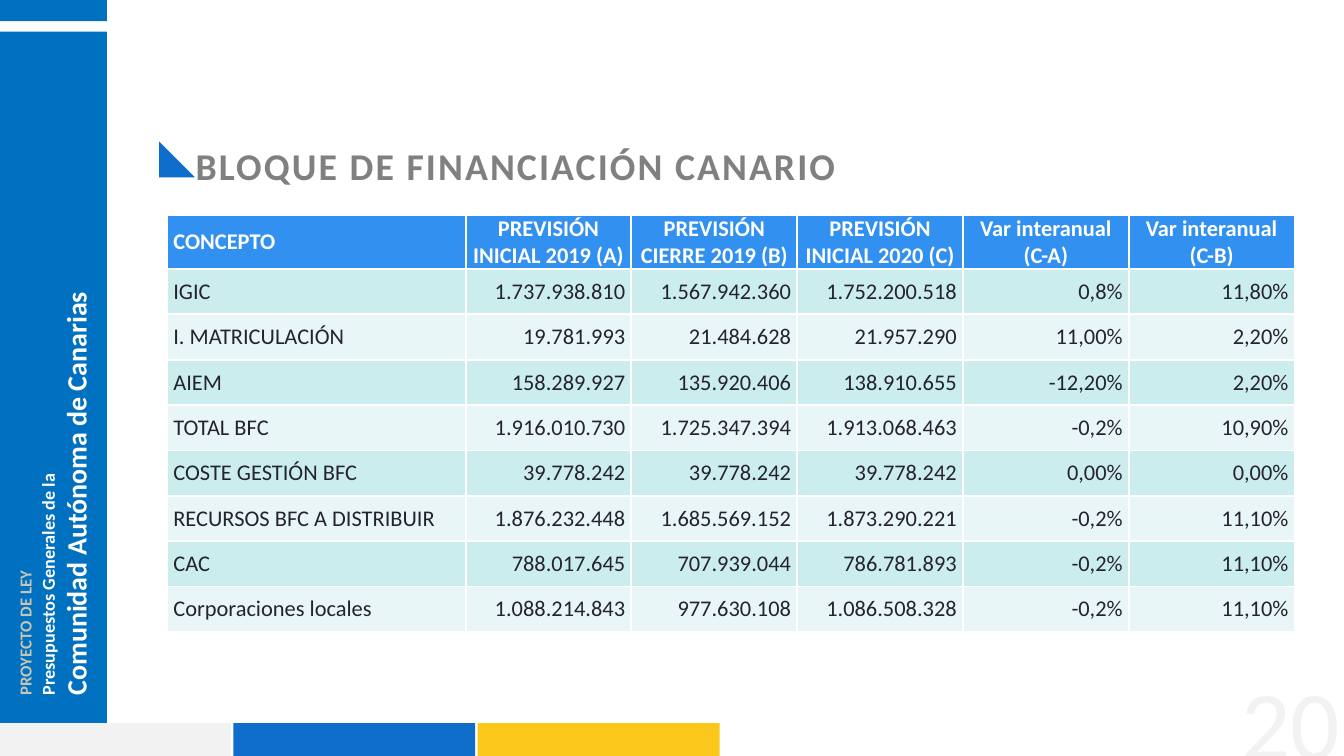
from lxml.etree import SubElement
from pptx import Presentation
from pptx.dml.color import RGBColor
from pptx.enum.shapes import MSO_SHAPE
from pptx.enum.text import MSO_ANCHOR, MSO_AUTO_SIZE, PP_ALIGN
from pptx.oxml.ns import qn
from pptx.util import Inches, Pt

HEADER = ["CONCEPTO", "PREVISIÓN INICIAL 2019 (A)", "PREVISIÓN CIERRE 2019 (B)",
          "PREVISIÓN INICIAL 2020 (C)", "Var interanual (C-A)", "Var interanual (C-B)"]
ROWS = [
    ["IGIC", "1.737.938.810", "1.567.942.360", "1.752.200.518", "0,8%", "11,80%"],
    ["I. MATRICULACIÓN", "19.781.993", "21.484.628", "21.957.290", "11,00%", "2,20%"],
    ["AIEM", "158.289.927", "135.920.406", "138.910.655", "-12,20%", "2,20%"],
    ["TOTAL BFC", "1.916.010.730", "1.725.347.394", "1.913.068.463", "-0,2%", "10,90%"],
    ["COSTE GESTIÓN BFC", "39.778.242", "39.778.242", "39.778.242", "0,00%", "0,00%"],
    ["RECURSOS BFC A DISTRIBUIR", "1.876.232.448", "1.685.569.152", "1.873.290.221",
     "-0,2%", "11,10%"],
    ["CAC", "788.017.645", "707.939.044", "786.781.893", "-0,2%", "11,10%"],
    ["Corporaciones locales", "1.088.214.843", "977.630.108", "1.086.508.328",
     "-0,2%", "11,10%"],
]


def rgb(value):
    """Return the colour for a hex string."""
    return RGBColor.from_string(value)


def style(p, size, color, bold=False, align=PP_ALIGN.LEFT):
    """Format a paragraph and its runs."""
    p.alignment = align
    for r in p.runs:
        r.font.name = "Calibri"
        r.font.size = Pt(size)
        r.font.bold = bold
        r.font.color.rgb = rgb(color)


def add_block(s, kind, left, top, width, height, color):
    """Add a flat shape without outline."""
    sp = s.shapes.add_shape(kind, Inches(left), Inches(top), Inches(width), Inches(height))
    sp.shadow.inherit = False
    sp.fill.solid()
    sp.fill.fore_color.rgb = rgb(color)
    sp.line.fill.background()


def add_side_text(s, left, top, width, height, lines):
    """Add upward-reading text lines given as (text, size, colour)."""
    sp = s.shapes.add_textbox(Inches(left), Inches(top), Inches(width), Inches(height))
    sp.rotation = 270
    tf = sp.text_frame
    tf.word_wrap = True
    tf.margin_left = tf.margin_right = tf.margin_top = tf.margin_bottom = 0
    tf.text = "\n".join(text for text, _, _ in lines)
    for p, (_, size, color) in zip(tf.paragraphs, lines):
        style(p, size, color, True)


def add_page_number(s, number):
    """Add the large page number in the bottom corner."""
    sp = s.shapes.add_textbox(Inches(20.47), Inches(13.09), Inches(6.22), Inches(1.92))
    tf = sp.text_frame
    tf.word_wrap = True
    tf.text = number
    style(tf.paragraphs[0], 139, "F2F2F2", align=PP_ALIGN.RIGHT)


def set_title(s, text):
    """Place and format the slide title."""
    sp = s.shapes.title
    sp.left, sp.top, sp.width, sp.height = (Inches(v) for v in (3.78, 2.78, 21.44, 1.39))
    tf = sp.text_frame
    tf.text = text
    tf.auto_size = MSO_AUTO_SIZE.NONE
    tf.vertical_anchor = MSO_ANCHOR.TOP
    p = tf.paragraphs[0]
    style(p, 54, "808080", True)
    p.runs[0].font._element.set("spc", "300")


def set_borders(cell, color, width):
    """Draw the four borders of a cell."""
    tcPr = cell._tc.get_or_add_tcPr()
    for side in ("a:lnL", "a:lnR", "a:lnT", "a:lnB"):
        ln = SubElement(tcPr, qn(side), w=str(Pt(width)))
        fill = SubElement(ln, qn("a:solidFill"))
        SubElement(fill, qn("a:srgbClr"), val=color)


def fill_cell(cell, text, fill, color, bold, align):
    """Write and format one table cell."""
    set_borders(cell, "FFFFFF", 3)
    cell.fill.solid()
    cell.fill.fore_color.rgb = rgb(fill)
    cell.vertical_anchor = MSO_ANCHOR.MIDDLE
    cell.margin_left = cell.margin_right = Inches(0.12)
    cell.margin_top = cell.margin_bottom = 0
    cell.text = text
    style(cell.text_frame.paragraphs[0], 32, color, bold, align)


def add_budget_table(s):
    """Add the funding table with banded rows."""
    data = [HEADER] + ROWS
    table = s.shapes.add_table(len(data), len(HEADER), Inches(3.32), Inches(4.27),
                               Inches(22.37), Inches(0.9 * len(data))).table
    for i, column in enumerate(table.columns):
        column.width = Inches(3.29 if i else 5.92)
    for i, values in enumerate(data):
        table.rows[i].height = Inches(0.9)
        if i == 0:
            fill, color, align = "3291F0", "FFFFFF", PP_ALIGN.CENTER
        else:
            fill, color, align = "CCEDEE" if i % 2 else "E8F6F7", "25232F", PP_ALIGN.RIGHT
        for j, text in enumerate(values):
            fill_cell(table.cell(i, j), text, fill, color, i == 0,
                      align if j else PP_ALIGN.LEFT)


def main():
    """Build the slide and save it."""
    prs = Presentation()
    prs.slide_width, prs.slide_height = Inches(26.67), Inches(15)
    s = prs.slides.add_slide(prs.slide_layouts[5])
    add_block(s, MSO_SHAPE.RECTANGLE, -0.09, 0.63, 2.21, 14.51, "0070C0")
    for i, color in enumerate(("F2F2F2", "0F6DCB", "FBC71A")):
        add_block(s, MSO_SHAPE.RECTANGLE, -0.22 + 4.85 * i, 14.35, 4.8, 0.99, color)
    add_side_text(s, -5.96, 7.14, 12.91, 0.4, [("PROYECTO DE LEY", 24, "C8C5B4")])
    add_side_text(s, -2.85, 9.19, 8.19, 1.03,
                  [("Presupuestos Generales de la", 26, "FFFFFF"),
                   ("Comunidad Autónoma de Canarias", 40, "FFFFFF")])
    add_block(s, MSO_SHAPE.RECTANGLE, -0.09, -0.06, 2.21, 0.48, "0070C0")
    add_page_number(s, "20")
    add_budget_table(s)
    set_title(s, "BLOQUE DE FINANCIACIÓN CANARIO")
    add_block(s, MSO_SHAPE.RIGHT_TRIANGLE, 3.16, 2.81, 0.71, 0.71, "0F6DCB")
    prs.save("out.pptx")


if __name__ == "__main__":
    main()
